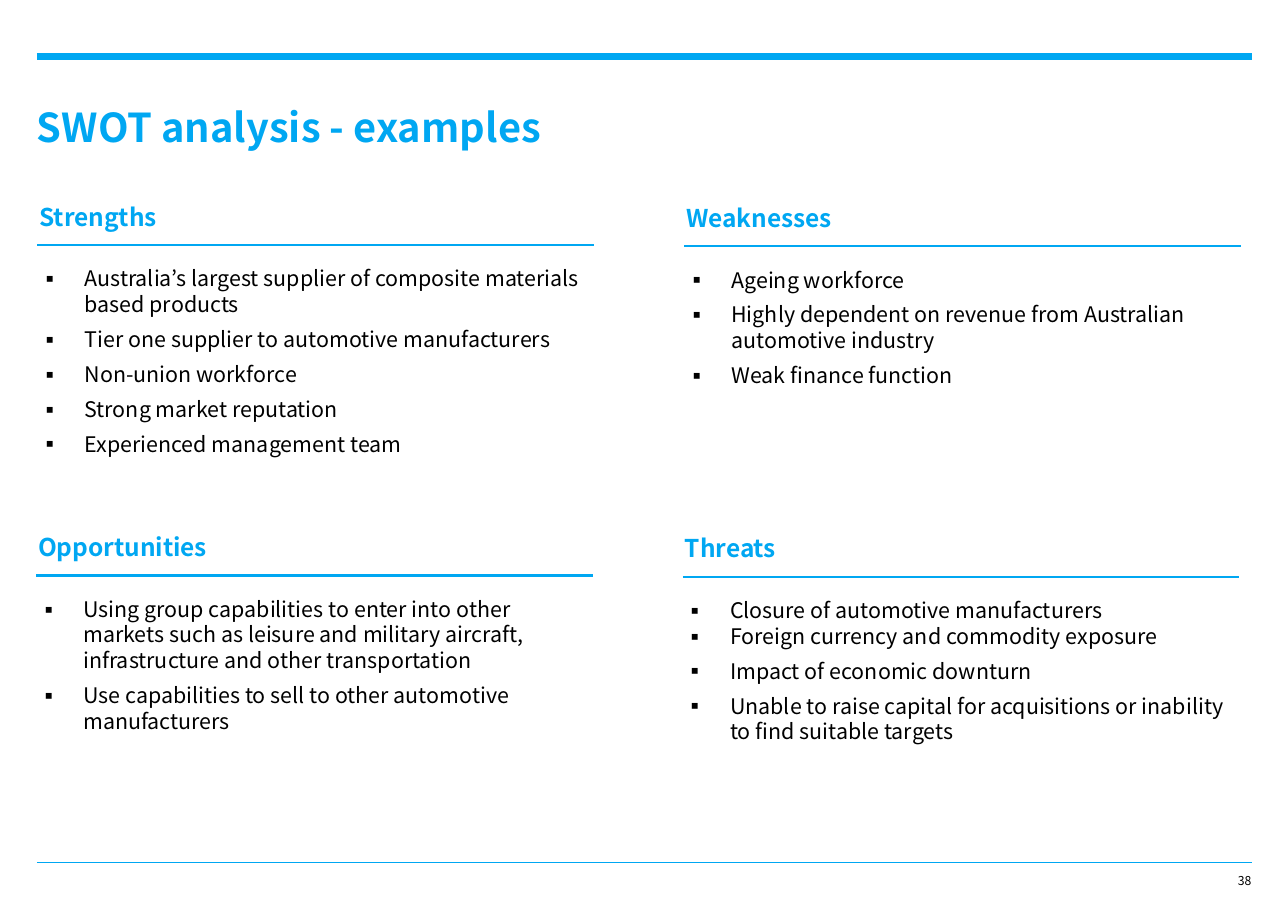
from dataclasses import dataclass

from lxml.etree import SubElement
from pptx import Presentation
from pptx.dml.color import RGBColor
from pptx.enum.shapes import MSO_CONNECTOR
from pptx.enum.text import MSO_ANCHOR, MSO_AUTO_SIZE, PP_ALIGN
from pptx.oxml.ns import qn
from pptx.util import Cm, Pt


@dataclass(frozen=True)
class Theme:
    font: str = "Noto Sans CJK KR"
    accent: RGBColor = RGBColor(0x00, 0xA7, 0xF2)
    ink: RGBColor = RGBColor(0, 0, 0)
    title_size: float = 26
    heading_size: float = 16
    body_size: float = 14
    number_size: float = 8
    leading: float = 1.2
    bullet_gap: float = 6
    heading_gap: float = 22.5
    bullet_indent: float = 1.04


class SwotSlide:
    def __init__(self, deck, theme):
        self.theme = theme
        self.slide = deck.slides.add_slide(deck.slide_layouts[5])

    def prepare_frame(self, shape):
        frame = shape.text_frame
        frame.margin_left = frame.margin_right = 0
        frame.margin_top = frame.margin_bottom = 0
        frame.word_wrap = True
        frame.auto_size = MSO_AUTO_SIZE.NONE
        frame.vertical_anchor = MSO_ANCHOR.TOP
        return frame

    def text_box(self, left, top, width, height):
        return self.prepare_frame(self.slide.shapes.add_textbox(
            Cm(left), Cm(top), Cm(width), Cm(height)))

    def set_text(self, paragraph, text, size, color, bold=False, before=0):
        paragraph.text = text
        paragraph.line_spacing = Pt(size * self.theme.leading)
        paragraph.space_before = Pt(before)
        font = paragraph.font
        font.name, font.size, font.bold = self.theme.font, Pt(size), bold
        font.color.rgb = color

    def title(self, text, left, top, width, height):
        heading = self.slide.shapes.title
        heading.left, heading.top = Cm(left), Cm(top)
        heading.width, heading.height = Cm(width), Cm(height)
        paragraph = self.prepare_frame(heading).paragraphs[0]
        paragraph.alignment = PP_ALIGN.LEFT
        self.set_text(paragraph, text, self.theme.title_size, self.theme.accent, True)

    def rule(self, left, top, width, weight):
        rule = self.slide.shapes.add_connector(
            MSO_CONNECTOR.STRAIGHT, Cm(left), Cm(top), Cm(left + width), Cm(top))
        rule.line.color.rgb = self.theme.accent
        rule.line.width = Pt(weight)
        SubElement(rule._element.spPr, qn("a:effectLst"))

    def page_number(self, text, left, top, width, height):
        paragraph = self.text_box(left, top, width, height).paragraphs[0]
        paragraph.alignment = PP_ALIGN.RIGHT
        self.set_text(paragraph, text, self.theme.number_size, self.theme.ink)

    def bullet(self, paragraph, text, before):
        properties = paragraph._p.get_or_add_pPr()
        indent = Cm(self.theme.bullet_indent)
        properties.set("marL", str(indent))
        properties.set("indent", str(-indent))
        SubElement(properties, qn("a:buFont"), typeface=self.theme.font)
        SubElement(properties, qn("a:buChar"), char="▪")
        self.set_text(paragraph, text, self.theme.body_size, self.theme.ink,
                      before=before)

    def quadrant(self, heading, points, left, top, width, height, tight=()):
        """Heading, rule and bullets; points listed in tight get no gap above."""
        frame = self.text_box(left, top, width, height)
        self.set_text(frame.paragraphs[0], heading, self.theme.heading_size,
                      self.theme.accent, True)
        for index, point in enumerate(points):
            gap = self.theme.bullet_gap if index else self.theme.heading_gap
            self.bullet(frame.add_paragraph(), point, 0 if index in tight else gap)
        self.rule(left - 0.05, top + 1, width, 1.5)


QUADRANTS = [
    ("Strengths", [
        "Australia’s largest supplier of composite materials based products",
        "Tier one supplier to automotive manufacturers",
        "Non-union workforce",
        "Strong market reputation",
        "Experienced management team",
    ], ()),
    ("Weaknesses", [
        "Ageing workforce",
        "Highly dependent on revenue from Australian automotive industry",
        "Weak finance function",
    ], ()),
    ("Opportunities", [
        "Using group capabilities to enter into other markets such as leisure "
        "and military aircraft, infrastructure and other transportation",
        "Use capabilities to sell to other automotive manufacturers",
    ], ()),
    ("Threats", [
        "Closure of automotive manufacturers",
        "Foreign currency and commodity exposure",
        "Impact of economic downturn",
        "Unable to raise capital for acquisitions or inability to find suitable targets",
    ], (1,)),
]


def main():
    deck = Presentation()
    deck.slide_width, deck.slide_height = Cm(29.69), Cm(21.01)
    swot = SwotSlide(deck, Theme())
    swot.rule(0.85, 1.3, 28, 4.5)
    swot.rule(0.85, 19.89, 28, 1)
    swot.title("SWOT analysis - examples", 0.85, 2.36, 28, 1.3)
    for index, (heading, points, tight) in enumerate(QUADRANTS):
        row, column = divmod(index, 2)
        swot.quadrant(heading, points,
                      left=0.91 + 14.91 * column - 0.03 * row,
                      top=4.65 + 7.62 * row + 0.03 * column,
                      width=12.83, height=6.8, tight=tight)
    swot.page_number("38", 28.05, 20.14, 0.8, 0.38)
    deck.save("out.pptx")


if __name__ == "__main__":
    main()
